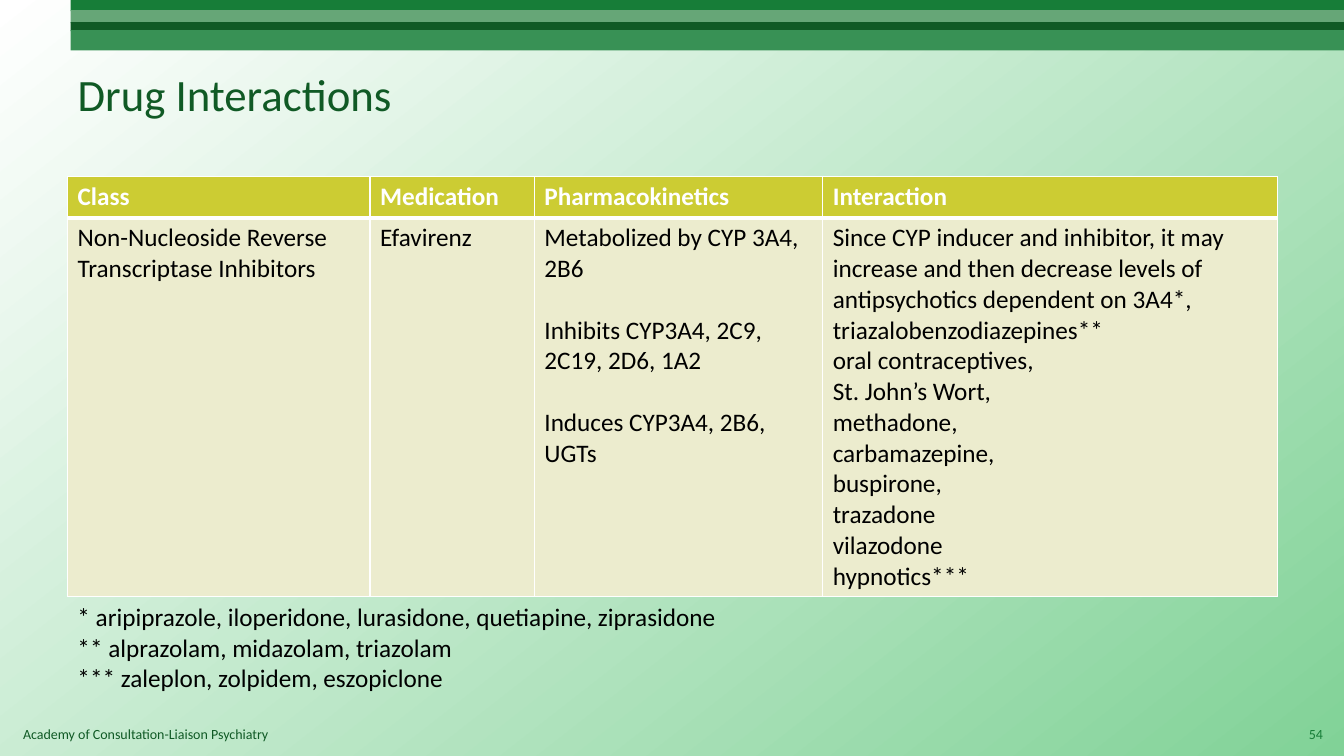
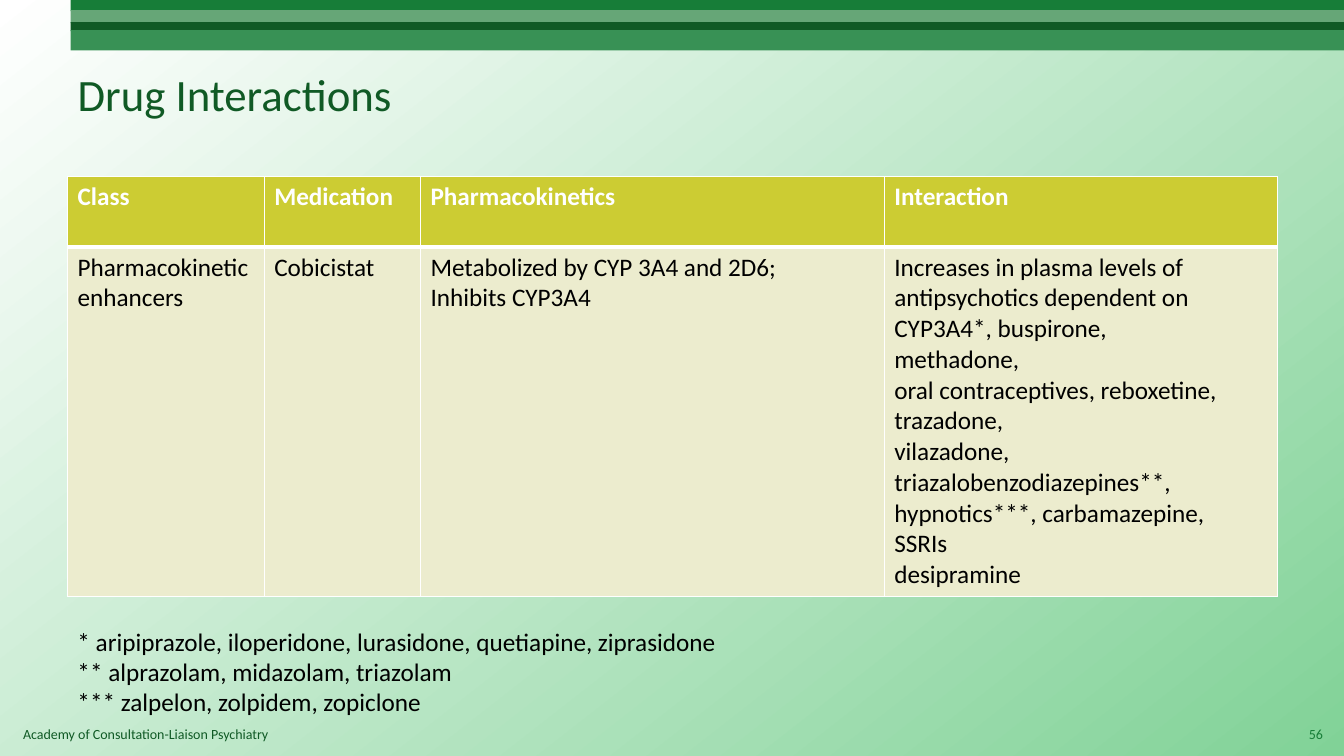
"""Build two drug interaction slides with a shared title, band and footer style."""
import lxml.etree
import pptx
import pptx.dml.color
import pptx.enum.shapes
import pptx.enum.text
import pptx.oxml.ns
import pptx.util

Inches = pptx.util.Inches
Pt = pptx.util.Pt
ALIGN = pptx.enum.text.PP_ALIGN
ANCHOR = pptx.enum.text.MSO_ANCHOR

COLORS = {
    "white": "FFFFFF", "black": "000000", "mint": "81D297",
    "green": "177D38", "sage": "66A677", "forest": "105A25", "leaf": "389155",
    "header": "CCCC33", "body": "ECECCE",
}
FORMATS = {
    "title": {"size": Pt(32), "bold": False},
    "small": {"size": Pt(10), "bold": False},
    "text": {"size": Pt(18), "bold": False},
    "header": {"size": Pt(18), "bold": True},
}
BANDS = [("green", 0, 0.11), ("sage", 0.1, 0.13), ("forest", 0.22, 0.09), ("leaf", 0.3, 0.2)]
TITLE = "Drug Interactions"
FOOTER = "Academy of Consultation-Liaison Psychiatry"
HEADERS = ["Class", "Medication", "Pharmacokinetics", "Interaction"]
NOTES = ["* aripiprazole, iloperidone, lurasidone, quetiapine, ziprasidone",
         "** alprazolam, midazolam, triazolam"]
SLIDES = [
    {
        "number": "54",
        "cols": [3, 1.63, 2.86, 4.51],
        "rows": [0.41, 3.76],
        "cells": [
            ["Non-Nucleoside Reverse Transcriptase Inhibitors"],
            ["Efavirenz"],
            ["Metabolized by CYP 3A4, 2B6", "Inhibits CYP3A4, 2C9, 2C19, 2D6, 1A2",
             "Induces CYP3A4, 2B6, UGTs"],
            ["Since CYP inducer and inhibitor, it may increase and then decrease levels of "
             "antipsychotics dependent on 3A4*, triazalobenzodiazepines**",
             "oral contraceptives,", "St. John’s Wort,", "methadone,", "carbamazepine,",
             "buspirone,", "trazadone", "vilazodone", "hypnotics***"],
        ],
        "gaps": {2: 22},
        "notes": NOTES + ["*** zaleplon, zolpidem, eszopiclone"],
        "notes_top": 5.92,
    },
    {
        "number": "56",
        "cols": [1.95, 1.55, 4.6, 3.9],
        "rows": [0.7, 3.47],
        "cells": [
            ["Pharmacokinetic enhancers"],
            ["Cobicistat"],
            ["Metabolized by CYP 3A4 and 2D6;", "Inhibits CYP3A4"],
            ["Increases in plasma levels of antipsychotics dependent on CYP3A4*, buspirone,",
             "methadone,", "oral contraceptives, reboxetine,", "trazadone,",
             "vilazadone, triazalobenzodiazepines**,", "hypnotics***, carbamazepine,",
             "SSRIs", "desipramine"],
        ],
        "gaps": {},
        "notes": NOTES + ["*** zalpelon, zolpidem, zopiclone"],
        "notes_top": 6.16,
    },
]


def rgb(name):
    """Return the named colour."""
    return pptx.dml.color.RGBColor.from_string(COLORS[name])


def write(tf, lines, style, color, align=ALIGN.LEFT, gap=0):
    """Write one formatted paragraph for each line."""
    for i, line in enumerate(lines):
        p = tf.add_paragraph() if i else tf.paragraphs[0]
        p.alignment = align
        if i and gap:
            p.space_before = Pt(gap)
        r = p.add_run()
        r.text = line
        r.font.name = "Calibri"
        r.font.color.rgb = rgb(color)
        for key, value in FORMATS[style].items():
            setattr(r.font, key, value)


def add_text(slide, box, lines, style, color, wrap=True, anchor=ANCHOR.TOP, align=ALIGN.LEFT):
    """Add a text box."""
    tf = slide.shapes.add_textbox(*map(Inches, box)).text_frame
    tf.word_wrap = wrap
    tf.vertical_anchor = anchor
    write(tf, lines, style, color, align)


def set_background(master):
    """Give the master its diagonal gradient."""
    fill = master.background.fill
    fill.gradient()
    fill.gradient_angle = 308
    for stop, name in zip(fill.gradient_stops, ("white", "mint")):
        stop.color.rgb = rgb(name)


def add_bands(slide, left, top, width):
    """Stack the coloured bands across the top."""
    for name, offset, height in BANDS:
        sp = slide.shapes.add_shape(
            pptx.enum.shapes.MSO_SHAPE.RECTANGLE,
            *map(Inches, (left, top + offset, width, height)))
        sp.shadow.inherit = False
        sp.fill.solid()
        sp.fill.fore_color.rgb = rgb(name)
        sp.line.fill.background()


def set_title(slide, box):
    """Place and format the title placeholder."""
    sp = slide.shapes.title
    for key, value in zip(("left", "top", "width", "height"), box):
        setattr(sp, key, Inches(value))
    tf = sp.text_frame
    tf.auto_size = pptx.enum.text.MSO_AUTO_SIZE.NONE
    tf.vertical_anchor = ANCHOR.MIDDLE
    write(tf, [TITLE], "title", "forest")


def set_borders(cell, widths):
    """Draw white borders with the given widths in points."""
    tc_pr = cell._tc.get_or_add_tcPr()
    qn = pptx.oxml.ns.qn
    for side, width in widths.items():
        ln = lxml.etree.SubElement(tc_pr, qn("a:ln" + side), w=str(Pt(width)))
        fill = lxml.etree.SubElement(ln, qn("a:solidFill"))
        lxml.etree.SubElement(fill, qn("a:srgbClr"), val=COLORS["white"])


def add_drug_table(slide, left, top, data):
    """Add the header row and the drug row."""
    cols, rows = data["cols"], data["rows"]
    table = slide.shapes.add_table(
        len(rows), len(cols), *map(Inches, (left, top, sum(cols), sum(rows)))).table
    table.horz_banding = False
    for col, width in zip(table.columns, cols):
        col.width = Inches(width)
    for row, height in zip(table.rows, rows):
        row.height = Inches(height)
    for c, (header, lines) in enumerate(zip(HEADERS, data["cells"])):
        head, body = table.cell(0, c), table.cell(1, c)
        set_borders(head, {"L": 1, "R": 1, "T": 1, "B": 3})
        set_borders(body, {"L": 1, "R": 1, "T": 3, "B": 1})
        for cell, name in ((head, "header"), (body, "body")):
            cell.fill.solid()
            cell.fill.fore_color.rgb = rgb(name)
        write(head.text_frame, [header], "header", "white")
        write(body.text_frame, lines, "text", "black", gap=data["gaps"].get(c, 0))


def add_footer(slide, top, number):
    """Add the organisation name and the slide number."""
    add_text(slide, (0.13, top, 9.25, 0.27), [FOOTER], "small", "forest")
    add_text(slide, (12.69, top - 0.07, 0.53, 0.4), [number], "small", "green",
             anchor=ANCHOR.MIDDLE, align=ALIGN.RIGHT)


def add_drug_slide(prs, data):
    """Build one drug interaction slide."""
    slide = prs.slides.add_slide(prs.slide_layouts[5])
    add_bands(slide, 0.7, 0, 12.63)
    set_title(slide, (0.67, 0.3, 12, 1.25))
    add_drug_table(slide, 0.67, 1.75, data)
    add_text(slide, (0.67, data["notes_top"], 6.62, 1.01), data["notes"], "text", "black",
             wrap=False)
    add_footer(slide, 7.15, data["number"])


def main():
    """Build and save the presentation."""
    prs = pptx.Presentation()
    prs.slide_width, prs.slide_height = Inches(13.33), Inches(7.5)
    set_background(prs.slide_master)
    for data in SLIDES:
        add_drug_slide(prs, data)
    prs.save("out.pptx")


if __name__ == "__main__":
    main()
